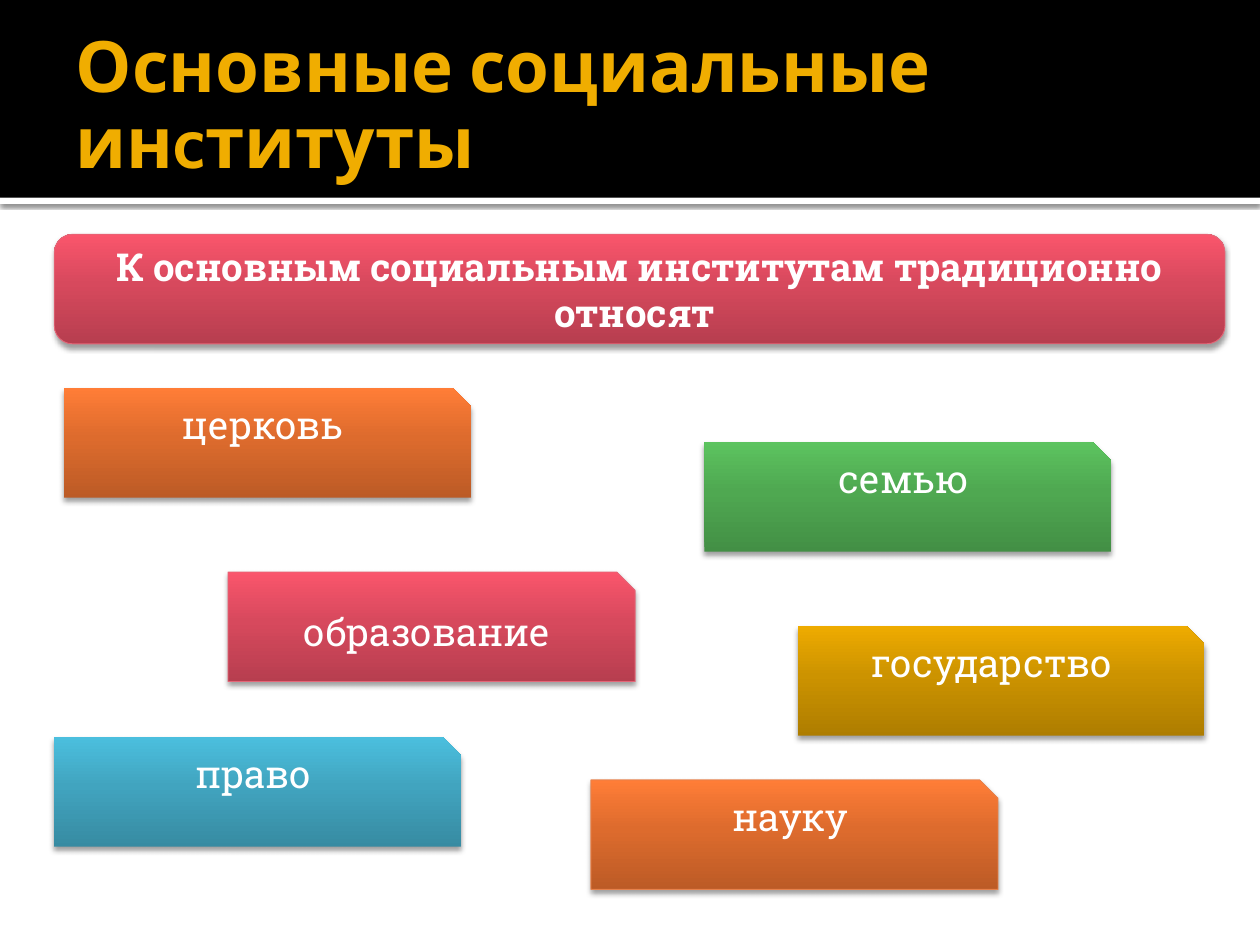
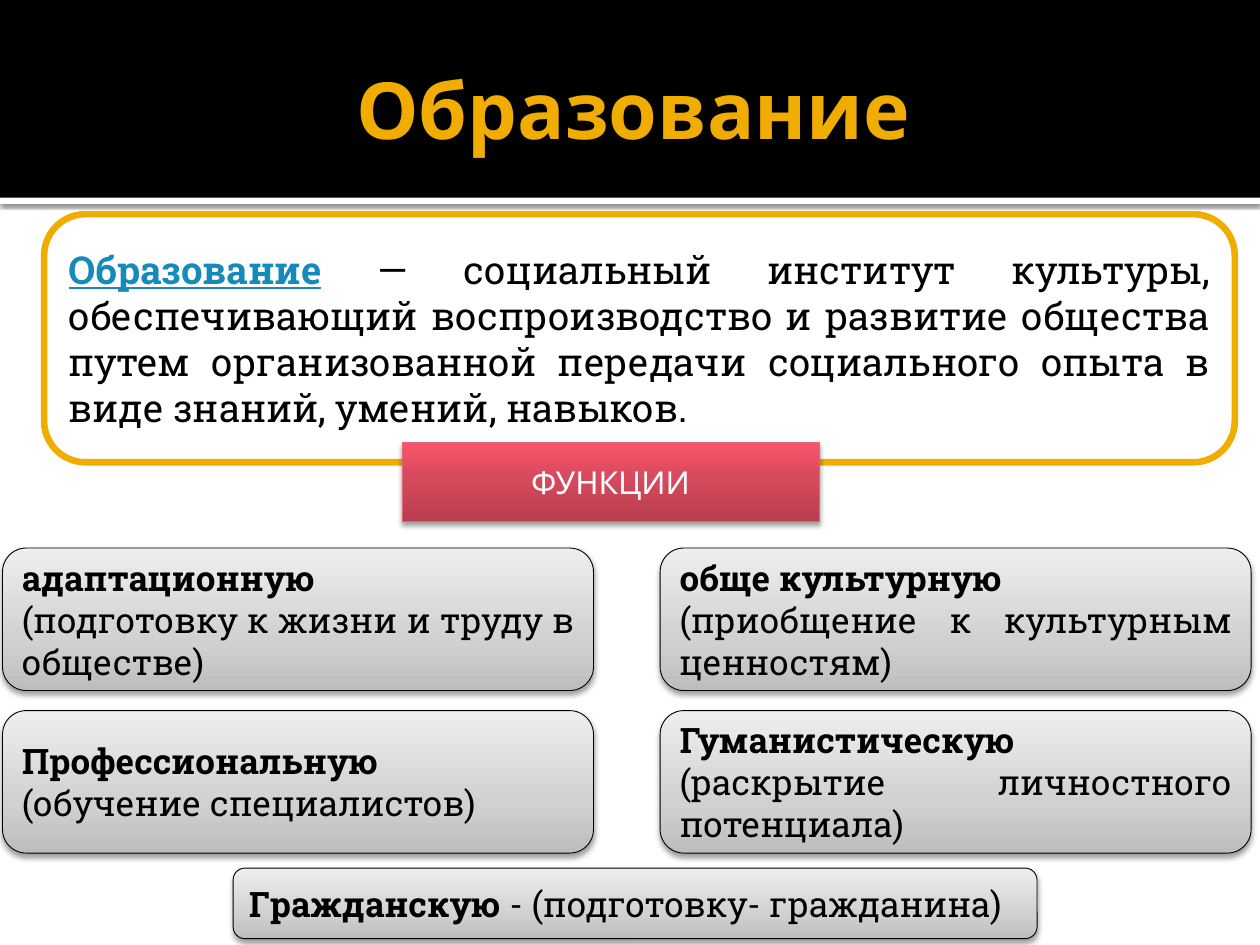
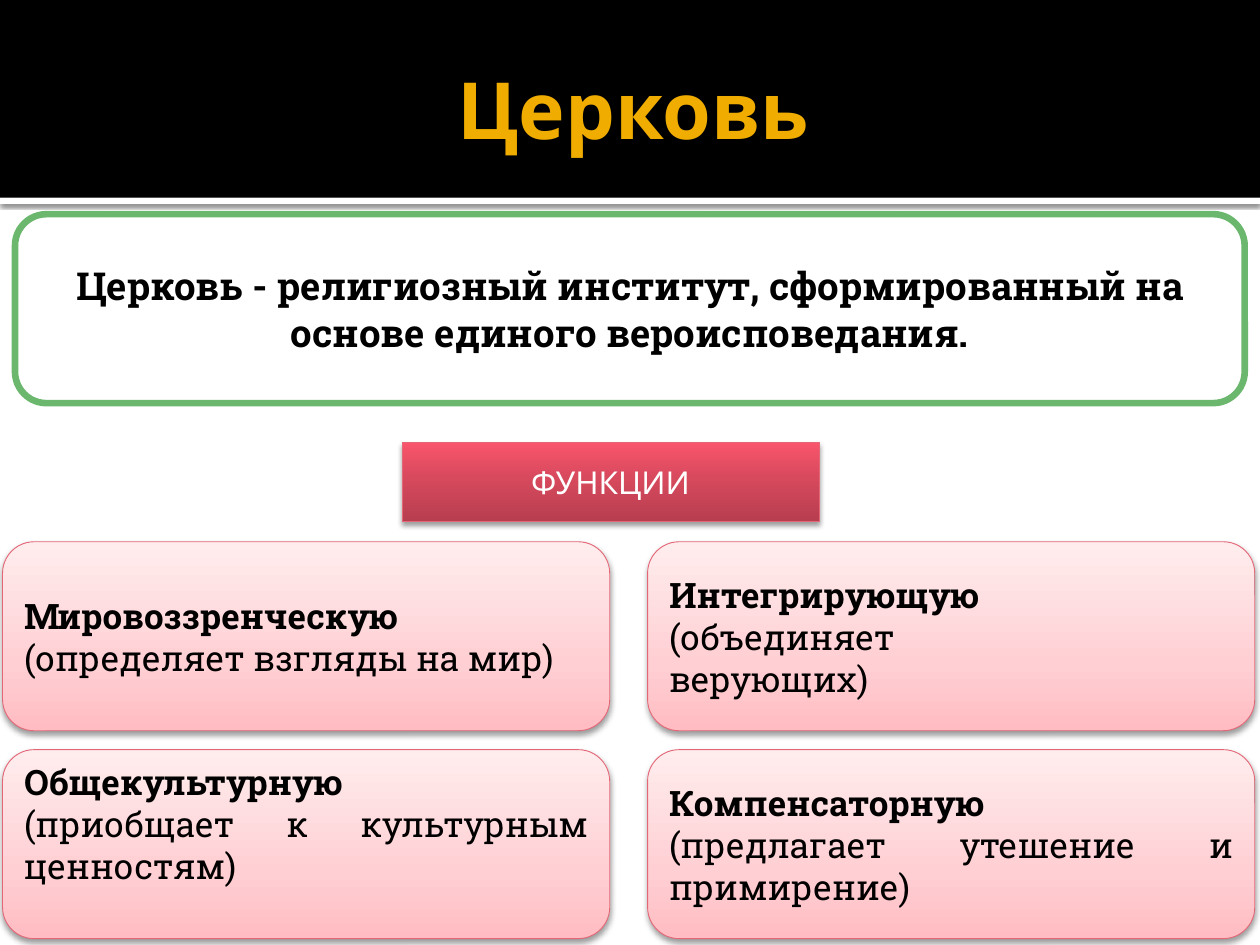
from dataclasses import dataclass
from itertools import product

from lxml.etree import SubElement
from pptx import Presentation
from pptx.dml.color import RGBColor
from pptx.enum.shapes import MSO_SHAPE as Shape
from pptx.enum.text import MSO_ANCHOR as Anchor, MSO_AUTO_SIZE as AutoSize, PP_ALIGN as Align
from pptx.oxml.ns import qn
from pptx.util import Pt


@dataclass(frozen=True)
class Theme:
    title_font: str = "Cabin"
    text_font: str = "Roboto Slab"
    black: str = "000000"
    white: str = "FFFFFF"
    gold: str = "F0AD00"
    green: str = "6BB76D"
    link: str = "168BBA"
    rose_edge: str = "E46778"
    orange_edge: str = "E7824C"
    red_fill: tuple = ((0, "B73E4F"), (55, "D7495D"), (100, "FA556C"))
    green_fill: tuple = ((0, "438F45"), (55, "4FA851"), (100, "5CC35F"))
    blue_fill: tuple = ((0, "378BA2"), (55, "41A4BF"), (100, "4BBFDE"))
    orange_fill: tuple = ((0, "BC5B26"), (55, "DD6B2D"), (100, "FF7D37"))
    gold_fill: tuple = ((0, "AE7D00"), (55, "CC9300"), (100, "EEAB00"))
    gray_fill: tuple = ((0, "BDBDBD"), (35, "D1D1D1"), (100, "EEEEEE"))
    pink_fill: tuple = ((0, "FFBCC2"), (35, "FFCFD3"), (100, "FFEDEE"))
    strong_shadow: tuple = (38, 3.1, 2)
    soft_shadow: tuple = (38, 3.5, 2)
    band_shadow: tuple = (60, 2.5, 0.8)
    title_size: float = 45
    long_title_size: float = 40.5
    lead_size: float = 22
    function_size: float = 20
    label_size: float = 18
    thick: float = 3.78
    thin: float = 0.5


class Deck:
    def __init__(self, theme):
        self.theme = theme
        self.file = Presentation()
        self.file.slide_width, self.file.slide_height = Pt(720), Pt(540)
        self.layout = self.file.slide_layouts[5]
        self.slide = None

    def start(self, heading, size, align=Align.CENTER, spacing=1.0):
        first = self.slide is None
        self.slide = self.file.slides.add_slide(self.layout)
        if first:
            self.bands()
        title = self.slide.shapes.title
        title.left, title.top, title.width, title.height = Pt(36), Pt(12.24), Pt(648), Pt(98.6)
        frame = title.text_frame
        frame.auto_size = AutoSize.NONE
        frame.margin_right = Pt(3.6)
        theme = self.theme
        self.set_text(title, [[(heading, True, theme.gold)]], size, align, theme.title_font)
        frame.paragraphs[0].line_spacing = spacing

    def bands(self):
        theme = self.theme
        divider = self.block(Shape.RECTANGLE, (0, 113, 720, 3.6), theme.white,
                             shadow=theme.band_shadow)
        header = self.block(Shape.RECTANGLE, (0, 0, 720, 113), theme.black)
        for position, band in enumerate((divider, header), 2):
            self.layout.shapes._spTree.insert(position, band._element)

    def block(self, kind, box, fill, edge=None, edge_width=0.5, shadow=None):
        shape = self.slide.shapes.add_shape(kind, *map(Pt, box))
        if isinstance(fill, str):
            shape.fill.solid()
            shape.fill.fore_color.rgb = RGBColor.from_string(fill)
        else:
            self.shade(shape, fill)
        if edge:
            shape.line.color.rgb = RGBColor.from_string(edge)
            shape.line.width = Pt(edge_width)
        else:
            shape.line.fill.background()
        shape.shadow.inherit = False
        if shadow:
            self.cast(shape, *shadow)
        return shape

    def shade(self, shape, stops):
        shape.fill.gradient()
        shape.fill.gradient_angle = 90
        stop_list = shape._element.spPr.find(".//" + qn("a:gsLst"))
        for old in list(stop_list):
            stop_list.remove(old)
        for percent, color in stops:
            stop = SubElement(stop_list, qn("a:gs"), pos=str(percent * 1000))
            SubElement(stop, qn("a:srgbClr"), val=color)

    def cast(self, shape, opacity, blur, distance):
        effects = shape._element.spPr.find(qn("a:effectLst"))
        outer = SubElement(effects, qn("a:outerShdw"), blurRad=str(int(Pt(blur))),
                           dist=str(int(Pt(distance))), dir="5400000", rotWithShape="0")
        color = SubElement(outer, qn("a:srgbClr"), val=self.theme.black)
        SubElement(color, qn("a:alpha"), val=str(opacity * 1000))

    def set_text(self, shape, lines, size, align, font=None, lift=0):
        frame = shape.text_frame
        frame.word_wrap = True
        frame.vertical_anchor = Anchor.MIDDLE
        frame.margin_bottom = Pt(3.6 + lift)
        for index, line in enumerate(lines):
            paragraph = frame.add_paragraph() if index else frame.paragraphs[0]
            paragraph.alignment = align
            for words, bold, color in line:
                run = paragraph.add_run()
                run.text = words
                run.font.name = font or self.theme.text_font
                run.font.size = Pt(size)
                run.font.bold = bold
                run.font.underline = color == self.theme.link
                run.font.color.rgb = RGBColor.from_string(color)

    def lead(self, words):
        theme = self.theme
        panel = self.block(Shape.ROUNDED_RECTANGLE, (31, 133.9, 669, 62.6), theme.red_fill,
                           theme.rose_edge, theme.thin, theme.strong_shadow)
        self.set_text(panel, [[(words, True, theme.white)]], theme.lead_size, Align.CENTER)

    def institution(self, name, left, top, fill, edge=None, raised=True):
        theme = self.theme
        card = self.block(Shape.SNIP_1_RECTANGLE, (left, top, 232.6, 62.6), fill, edge,
                          theme.thin, theme.strong_shadow)
        self.set_text(card, [[(name, False, theme.white)]], theme.lead_size, Align.CENTER,
                      lift=26.4 if raised else 0)

    def definition(self, box, edge, runs, align):
        theme = self.theme
        panel = self.block(Shape.ROUNDED_RECTANGLE, box, theme.white, edge, theme.thick)
        self.set_text(panel, [runs], theme.lead_size, align)

    def functions_label(self):
        theme = self.theme
        label = self.block(Shape.RECTANGLE, (229.7, 252.7, 238.3, 45.4), theme.red_fill,
                           theme.rose_edge, theme.thin, theme.strong_shadow)
        self.set_text(label, [[("ФУНКЦИИ", False, theme.white)]], theme.label_size,
                      Align.CENTER, theme.title_font)

    def function(self, box, fill, edge, lines, lift=0):
        theme = self.theme
        card = self.block(Shape.ROUNDED_RECTANGLE, box, fill, edge, theme.thin,
                          theme.soft_shadow)
        self.set_text(card, lines, theme.function_size, Align.JUSTIFY, lift=lift)

    def function_grid(self, top, size, pitch, fill, edge, functions):
        black = self.theme.black
        for (row, column), (name, details, lift) in zip(product(range(2), repeat=2), functions):
            box = (1.44 + column * pitch[0], top + row * pitch[1], *size)
            lines = [[(name, True, black)]] + [[(detail, False, black)] for detail in details]
            self.function(box, fill, edge, lines, lift)


def institutions(deck):
    theme = deck.theme
    deck.start("Основные социальные инcтитуты", theme.long_title_size, Align.LEFT, 0.9)
    deck.lead("К основным социальным институтам традиционно относят ")
    deck.institution("семью", 402.5, 252.7, theme.green_fill)
    deck.institution("право", 31, 421.2, theme.blue_fill)
    deck.institution("церковь", 36.7, 221.8, theme.orange_fill)
    deck.institution("науку", 337.7, 445.7, theme.orange_fill, theme.orange_edge)
    deck.institution("государство ", 455.8, 357.8, theme.gold_fill)
    deck.institution("образование", 130.3, 326.9, theme.red_fill, theme.rose_edge, raised=False)


def education(deck):
    theme = deck.theme
    deck.start("Образование", theme.title_size)
    deck.definition((25.2, 122.4, 680.4, 141.8), theme.gold, [
        ("Образование", True, theme.link),
        (" — социальный институт культуры, обеспечивающий воспроизводство и развитие "
         "общества путем организованной передачи социального опыта в виде знаний, "
         "умений, навыков. ", False, theme.black),
    ], Align.JUSTIFY)
    deck.functions_label()
    deck.function_grid(313.2, (337.7, 81.4), (375.8, 92.9), theme.gray_fill, theme.black, [
        ("адаптационную ", ["(подготовку к жизни и труду в обществе)"], 0),
        ("обще культурную", ["(приобщение к культурным ценностям)"], 0),
        ("Профессиональную", ["(обучение специалистов)"], 0),
        ("Гуманистическую", ["(раскрытие личностного потенциала)"], 0),
    ])
    deck.function((133.2, 496.1, 459.4, 40.3), theme.gray_fill, theme.black, [[
        ("Гражданскую", True, theme.black),
        (" - (подготовку- гражданина)", False, theme.black),
    ]])


def church(deck):
    theme = deck.theme
    deck.start("Церковь", theme.title_size)
    deck.definition((8.6, 122.4, 702.7, 108), theme.green, [
        ("Церковь - религиозный институт, сформированный на основе единого "
         "вероисповедания.", True, theme.black),
    ], Align.CENTER)
    deck.functions_label()
    deck.function_grid(309.6, (347, 108), (368.6, 118.8), theme.pink_fill, theme.rose_edge, [
        ("Мировоззренческую", ["(определяет взгляды на мир)"], 0),
        ("Интегрирующую ", ["(объединяет", "верующих)"], 0),
        ("Общекультурную", ["(приобщает к культурным ценностям) "], 24),
        ("Компенсаторную", ["(предлагает утешение и примирение)"], 0),
    ])


def main():
    deck = Deck(Theme())
    for build in (institutions, education, church):
        build(deck)
    deck.file.save("out.pptx")


if __name__ == "__main__":
    main()
